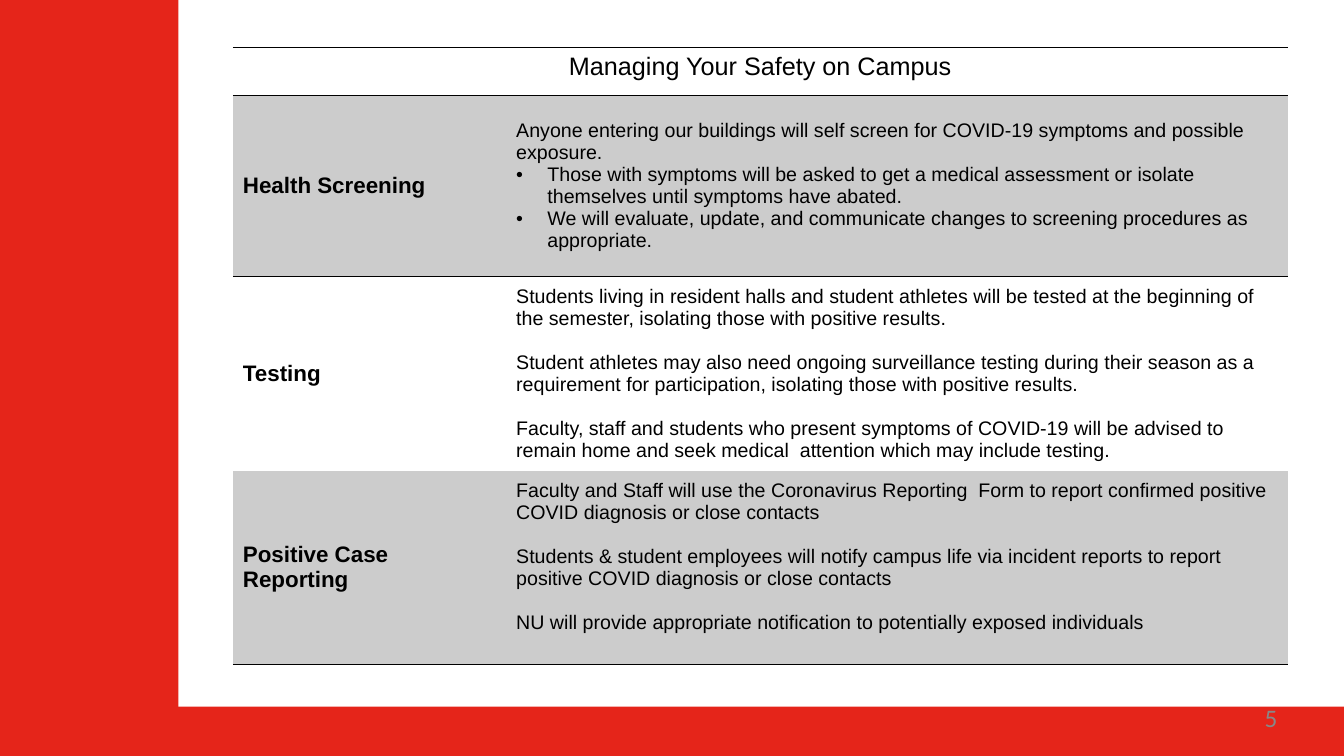
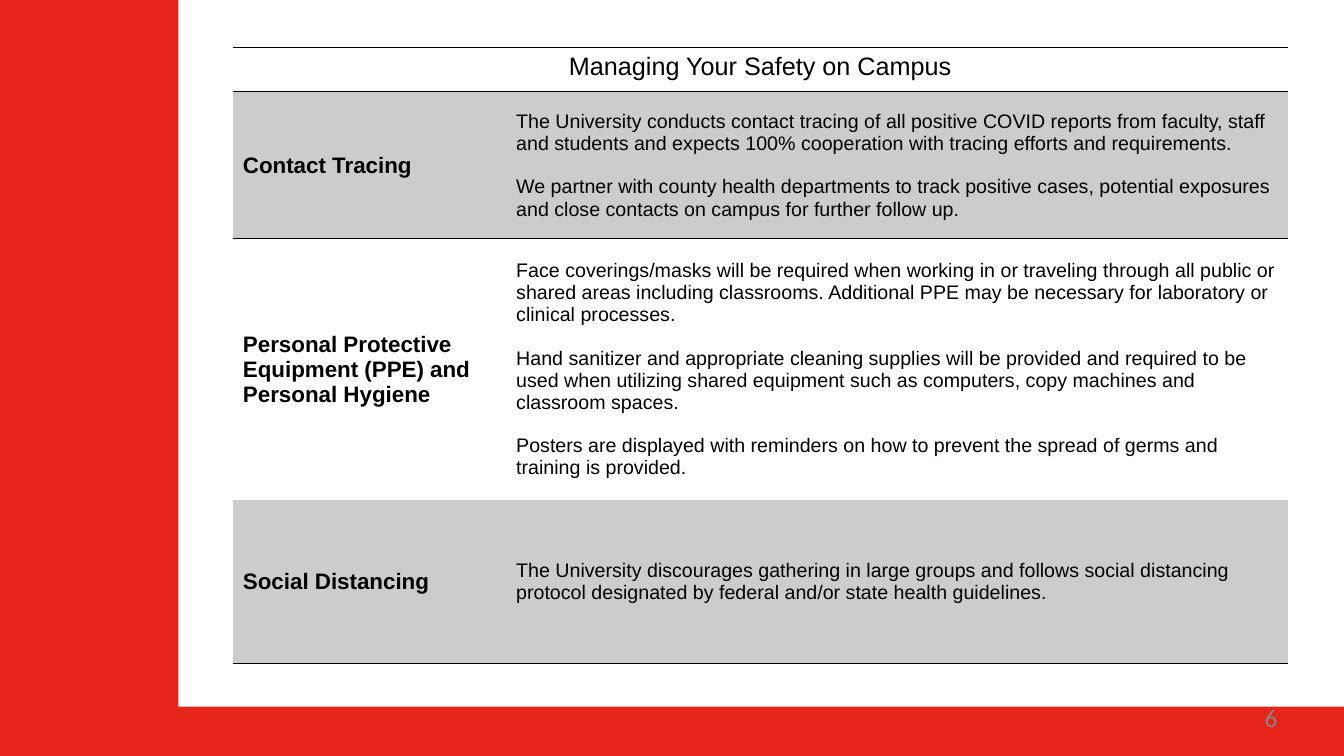
from lxml import etree
from pptx import Presentation
from pptx.dml.color import RGBColor
from pptx.enum.shapes import MSO_SHAPE
from pptx.enum.text import MSO_ANCHOR, PP_ALIGN
from pptx.oxml.ns import qn
from pptx.util import Inches, Pt

RED = RGBColor(0xE5, 0x25, 0x1A)
BLACK = RGBColor(0, 0, 0)
BAND_GREY = RGBColor(0xCC, 0xCC, 0xCC)
NUMBER_GREY = RGBColor(0x88, 0x88, 0x88)

WIDTH, HEIGHT = 13.33, 7.5
SIDE_WIDTH, FOOTER_TOP = 1.77, 7.01
TABLE_LEFT, TABLE_TOP = 2.31, 0.47
COLUMNS = (2.71, 7.75)
PLAIN_TABLE_STYLE = "{2D5ABB26-0587-4C30-8999-92F81FD0307C}"
BULLET = "• "

# Content: each row is (height, label, paragraphs, bottom margin)
TITLE = "Managing Your Safety on Campus"
MARGIN, DEEP_MARGIN = 0.05, 0.27
SLIDES = [
    {"number": "5", "header": 0.48, "rows": [
        (1.79, "Health Screening", [
            "Anyone entering our buildings will self screen for COVID-19 symptoms and possible exposure.",
            BULLET + "Those with symptoms will be asked to get a medical assessment or isolate "
            "themselves until symptoms have abated.",
            BULLET + "We will evaluate, update, and communicate changes to screening procedures "
            "as appropriate.",
        ], MARGIN),
        (1.85, "Testing", [
            "Students living in resident halls and student athletes will be tested at the beginning "
            "of the semester, isolating those with positive results.",
            "Student athletes may also need ongoing surveillance testing during their season as a "
            "requirement for participation, isolating those with positive results.",
            "Faculty, staff and students who present symptoms of COVID-19 will be advised to remain "
            "home and seek medical  attention which may include testing.",
        ], MARGIN),
        (1.85, "Positive Case Reporting", [
            "Faculty and Staff will use the Coronavirus Reporting  Form to report confirmed positive "
            "COVID diagnosis or close contacts",
            "Students & student employees will notify campus life via incident reports to report "
            "positive COVID diagnosis or close contacts",
            "NU will provide appropriate notification to potentially exposed individuals",
        ], DEEP_MARGIN),
    ]},
    {"number": "6", "header": 0.44, "rows": [
        (1.46, "Contact Tracing", [
            "The University conducts contact tracing of all positive COVID reports from faculty, staff "
            "and students and expects 100% cooperation with tracing efforts and requirements.",
            "We partner with county health departments to track positive cases, potential exposures "
            "and close contacts on campus for further follow up.",
        ], MARGIN),
        (2.59, "Personal Protective Equipment (PPE) and Personal Hygiene", [
            "Face coverings/masks will be required when working in or traveling through all public or "
            "shared areas including classrooms. Additional PPE may be necessary for laboratory or "
            "clinical processes.",
            "Hand sanitizer and appropriate cleaning supplies will be provided and required to be used "
            "when utilizing shared equipment such as computers, copy machines and classroom spaces.",
            "Posters are displayed with reminders on how to prevent the spread of germs and training "
            "is provided.",
        ], MARGIN),
        (1.62, "Social Distancing", [
            "The University discourages gathering in large groups and follows social distancing "
            "protocol designated by federal and/or state health guidelines.",
        ], MARGIN),
    ]},
]


def write(frame, paragraphs, size, font="Arial", color=BLACK, bold=False,
          align=PP_ALIGN.LEFT, gap=15.5):
    """Fill a text frame; lines that start with the bullet mark become list items."""
    for index, text in enumerate(paragraphs):
        paragraph = frame.add_paragraph() if index else frame.paragraphs[0]
        paragraph.alignment = align
        if text.startswith(BULLET):
            add_bullet(paragraph)
        elif index:
            paragraph.space_before = Pt(gap)
        run = paragraph.add_run()
        run.text = text.removeprefix(BULLET)
        run.font.size, run.font.name, run.font.bold = Pt(size), font, bold
        run.font.color.rgb = color


def add_bullet(paragraph, indent=0.31):
    properties = paragraph._p.get_or_add_pPr()
    properties.set("marL", str(Inches(indent)))
    properties.set("indent", str(-Inches(indent)))
    etree.SubElement(properties, qn("a:buFont"), typeface="Arial")
    etree.SubElement(properties, qn("a:buChar"), char=BULLET.strip())


def add_border(cell, side):
    line = etree.SubElement(cell._tc.get_or_add_tcPr(), qn("a:ln" + side), w=str(Pt(1)))
    fill = etree.SubElement(line, qn("a:solidFill"))
    etree.SubElement(fill, qn("a:srgbClr"), val=str(BLACK))


def style_cell(cell, borders="", fill=None, anchor=MSO_ANCHOR.MIDDLE, bottom=MARGIN):
    cell.margin_left = cell.margin_right = Inches(0.1)
    cell.margin_top, cell.margin_bottom = Inches(MARGIN), Inches(bottom)
    cell.vertical_anchor = anchor
    for side in borders:
        add_border(cell, side)
    if fill is None:
        cell.fill.background()
    else:
        cell.fill.solid()
        cell.fill.fore_color.rgb = fill


def add_frame(slide, number):
    """Red footer and side band, with the slide number."""
    for left, top, width, height in ((0, FOOTER_TOP, WIDTH, HEIGHT - FOOTER_TOP),
                                     (0, 0, SIDE_WIDTH, FOOTER_TOP + 0.25)):
        band = slide.shapes.add_shape(MSO_SHAPE.RECTANGLE, Inches(left), Inches(top),
                                      Inches(width), Inches(height))
        band.shadow.inherit = False
        band.fill.solid()
        band.fill.fore_color.rgb = RED
        band.line.fill.background()
    box = slide.shapes.add_textbox(Inches(9.6), Inches(6.97), Inches(3.07), Inches(0.38))
    frame = box.text_frame
    frame.word_wrap = True
    frame.margin_left = frame.margin_right = frame.margin_top = frame.margin_bottom = 0
    write(frame, [number], 18, font="Calibri", color=NUMBER_GREY, align=PP_ALIGN.RIGHT)


def add_safety_table(slide, header, rows):
    heights = [header] + [row[0] for row in rows]
    table = slide.shapes.add_table(
        len(heights), len(COLUMNS), Inches(TABLE_LEFT), Inches(TABLE_TOP),
        Inches(sum(COLUMNS)), Inches(sum(heights))).table
    table.first_row = table.horz_banding = False
    table._tbl.tblPr.find(qn("a:tableStyleId")).text = PLAIN_TABLE_STYLE
    for column, width in zip(table.columns, COLUMNS):
        column.width = Inches(width)
    for row, height in zip(table.rows, heights):
        row.height = Inches(height)

    # Title row across both columns
    title = table.cell(0, 0)
    title.merge(table.cell(0, 1))
    for cell in table.rows[0].cells:
        style_cell(cell, borders="TB", anchor=MSO_ANCHOR.TOP)
    write(title.text_frame, [TITLE], 18, align=PP_ALIGN.CENTER)

    # Topic rows, every other one shaded
    for index, (_, label, paragraphs, bottom) in enumerate(rows, 1):
        fill = BAND_GREY if index % 2 else None
        borders = {1: "T", len(rows): "B"}.get(index, "")
        topic, details = table.cell(index, 0), table.cell(index, 1)
        style_cell(topic, borders, fill)
        style_cell(details, borders, fill, bottom=bottom)
        write(topic.text_frame, [label], 16, bold=True)
        write(details.text_frame, paragraphs, 14)


def main():
    presentation = Presentation()
    presentation.slide_width, presentation.slide_height = Inches(WIDTH), Inches(HEIGHT)
    for content in SLIDES:
        slide = presentation.slides.add_slide(presentation.slide_layouts[6])
        add_frame(slide, content["number"])
        add_safety_table(slide, content["header"], content["rows"])
    presentation.save("out.pptx")


if __name__ == "__main__":
    main()
